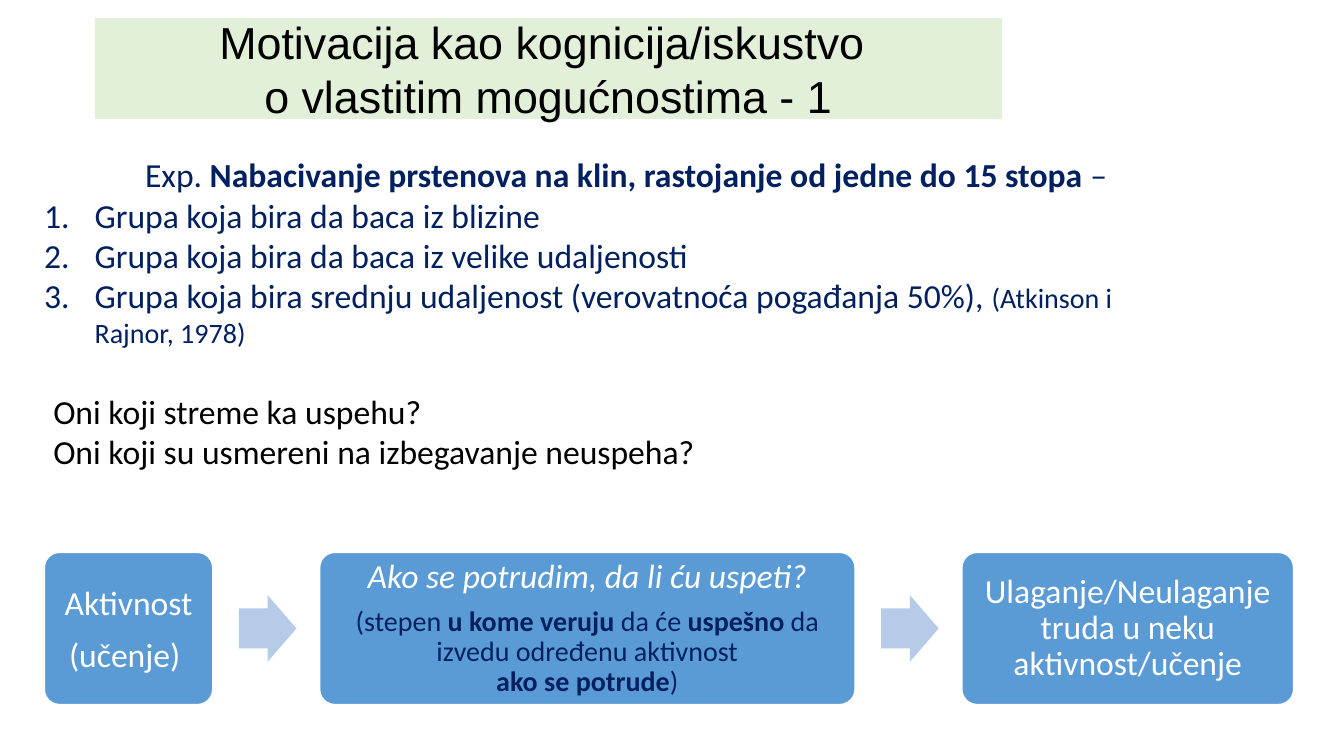
from dataclasses import dataclass

import pptx
import pptx.dml.color
import pptx.enum.shapes
import pptx.enum.text
import pptx.oxml
import pptx.oxml.ns
import pptx.util

Inches, Pt = pptx.util.Inches, pptx.util.Pt
ALIGN = pptx.enum.text.PP_ALIGN
ANCHOR = pptx.enum.text.MSO_ANCHOR
SHAPE = pptx.enum.shapes.MSO_SHAPE


@dataclass(frozen=True)
class Theme:
    title_font: str = "Arial"
    body_font: str = "Calibri"
    title_size: int = 32
    body_size: int = 24
    small_size: int = 20
    black: str = "000000"
    white: str = "FFFFFF"
    navy: str = "002060"
    title_fill: str = "E2F0D9"
    box_fill: str = "5B9BD5"
    arrow_fill: str = "B5CBE7"


def rgb(value):
    return pptx.dml.color.RGBColor.from_string(value)


class SlideBuilder:
    def __init__(self, s, theme):
        self.s = s
        self.theme = theme

    def place(self, sp, left, top, width, height):
        sp.left, sp.top = Inches(left), Inches(top)
        sp.width, sp.height = Inches(width), Inches(height)

    def fill_text(self, tf, paragraphs, color, font=None, size=None, inset=None,
                  anchor=ANCHOR.TOP, **spacing):
        """Each paragraph is a list of (text, font overrides); "\\n" is a line break."""
        tf.word_wrap = True
        tf.auto_size = pptx.enum.text.MSO_AUTO_SIZE.NONE
        tf.vertical_anchor = anchor
        if inset is not None:
            for side in ("left", "top", "right", "bottom"):
                setattr(tf, f"margin_{side}", Inches(inset))
        for i, runs in enumerate(paragraphs):
            p = tf.paragraphs[0] if i == 0 else tf.add_paragraph()
            for name, value in spacing.items():
                setattr(p, name, value)
            for text, overrides in runs:
                if text == "\n":
                    p.add_line_break()
                    continue
                r = p.add_run()
                r.text = text
                style = {"name": font or self.theme.body_font,
                         "size": size or self.theme.body_size,
                         "color": color, **overrides}
                r.font.color.rgb = rgb(style.pop("color"))
                style["size"] = Pt(style["size"])
                for name, value in style.items():
                    setattr(r.font, name, value)

    def title(self, box, lines):
        sp = self.s.shapes.title
        self.place(sp, *box)
        sp.fill.solid()
        sp.fill.fore_color.rgb = rgb(self.theme.title_fill)
        self.fill_text(sp.text_frame, lines, self.theme.black, self.theme.title_font,
                       self.theme.title_size, anchor=ANCHOR.MIDDLE,
                       alignment=ALIGN.CENTER)

    def text(self, box, paragraphs, color, **spacing):
        sp = self.s.shapes.add_textbox(*map(Inches, box))
        self.fill_text(sp.text_frame, paragraphs, color, **spacing)
        return sp.text_frame

    def indent(self, p, margin, first, numbered=False):
        pPr = p._p.get_or_add_pPr()
        pPr.set("marL", str(Inches(margin)))
        pPr.set("indent", str(Inches(first)))
        if numbered:
            pPr.append(pptx.oxml.parse_xml(
                f'<a:buAutoNum {pptx.oxml.ns.nsdecls("a")} type="arabicPeriod"/>'))

    def shape(self, kind, box, fill, adjustments):
        sp = self.s.shapes.add_shape(kind, *map(Inches, box))
        sp.shadow.inherit = False
        sp.fill.solid()
        sp.fill.fore_color.rgb = rgb(fill)
        sp.line.fill.background()
        for i, value in enumerate(adjustments):
            sp.adjustments[i] = value
        return sp

    def step(self, box, paragraphs, **spacing):
        sp = self.shape(SHAPE.ROUNDED_RECTANGLE, box, self.theme.box_fill, [0.1])
        sp.line.color.rgb = rgb(self.theme.white)
        sp.line.width = Pt(1)
        self.fill_text(sp.text_frame, paragraphs, self.theme.white, inset=0.14,
                       anchor=ANCHOR.MIDDLE, alignment=ALIGN.CENTER,
                       space_after=Pt(8.4), **spacing)

    def arrow(self, box):
        self.shape(SHAPE.RIGHT_ARROW, box, self.theme.arrow_fill, [0.6, 0.5])


def main():
    prs = pptx.Presentation()
    prs.slide_width, prs.slide_height = Inches(13.33), Inches(7.5)
    theme = Theme()
    slide = SlideBuilder(prs.slides.add_slide(prs.slide_layouts[5]), theme)

    slide.title((0.94, 0.18, 9, 1), [
        [("Motivacija kao kognicija/iskustvo ", {})],
        [("o vlastitim mogućnostima - 1", {})],
    ])

    bold = {"bold": True}
    experiment = slide.text((0.34, 1.48, 10.79, 2.2), [
        [("Exp. ", {}),
         ("Nabacivanje prstenova na klin, rastojanje od jedne do 15 stopa ", bold),
         ("–", {})],
        [("Grupa koja bira da baca iz blizine", {})],
        [("Grupa koja bira da baca iz velike udaljenosti", {})],
        [("Grupa koja bira srednju udaljenost (verovatnoća pogađanja 50%), ", {}),
         ("(Atkinson i Rajnor, 1978) ", {"size": theme.small_size})],
    ], theme.navy, alignment=ALIGN.JUSTIFY)
    heading, *groups = experiment.paragraphs
    slide.indent(heading, 0, 1)
    for p in groups:
        slide.indent(p, 0.5, -0.5, numbered=True)

    slide.text((0.43, 3.83, 10.19, 1.21), [
        [("Oni koji streme ka uspehu?", {})],
        [("Oni koji su usmereni na izbegavanje neuspeha?", {})],
    ], theme.black)

    detail = {"size": theme.small_size, "color": theme.navy}
    strong = {**detail, **bold}
    steps = [
        (1.67, {}, [[("Aktivnost", {})], [("(učenje) ", {})]]),
        (5.31, {"line_spacing": 0.9}, [
            [("Ako se potrudim, da li ću uspeti?", {"italic": True})],
            [("(stepen ", detail), ("u kome veruju ", strong), ("da će ", detail),
             ("uspešno", strong), (" da izvedu određenu aktivnost", detail),
             ("\n", {}), ("ako se potrude", strong), (")", detail)],
        ]),
        (3.29, {"line_spacing": 0.9},
         [[("Ulaganje/Neulaganje truda u neku aktivnost/učenje", {})]]),
    ]
    left, top, height, gap = 0.44, 5.48, 1.51, 1.06
    arrow_width, arrow_height = 0.57, 0.66
    for i, (width, spacing, paragraphs) in enumerate(steps):
        if i:
            slide.arrow((left - gap + 0.26, top + (height - arrow_height) / 2,
                         arrow_width, arrow_height))
        slide.step((left, top, width, height), paragraphs, **spacing)
        left += width + gap

    prs.save("out.pptx")


if __name__ == "__main__":
    main()
